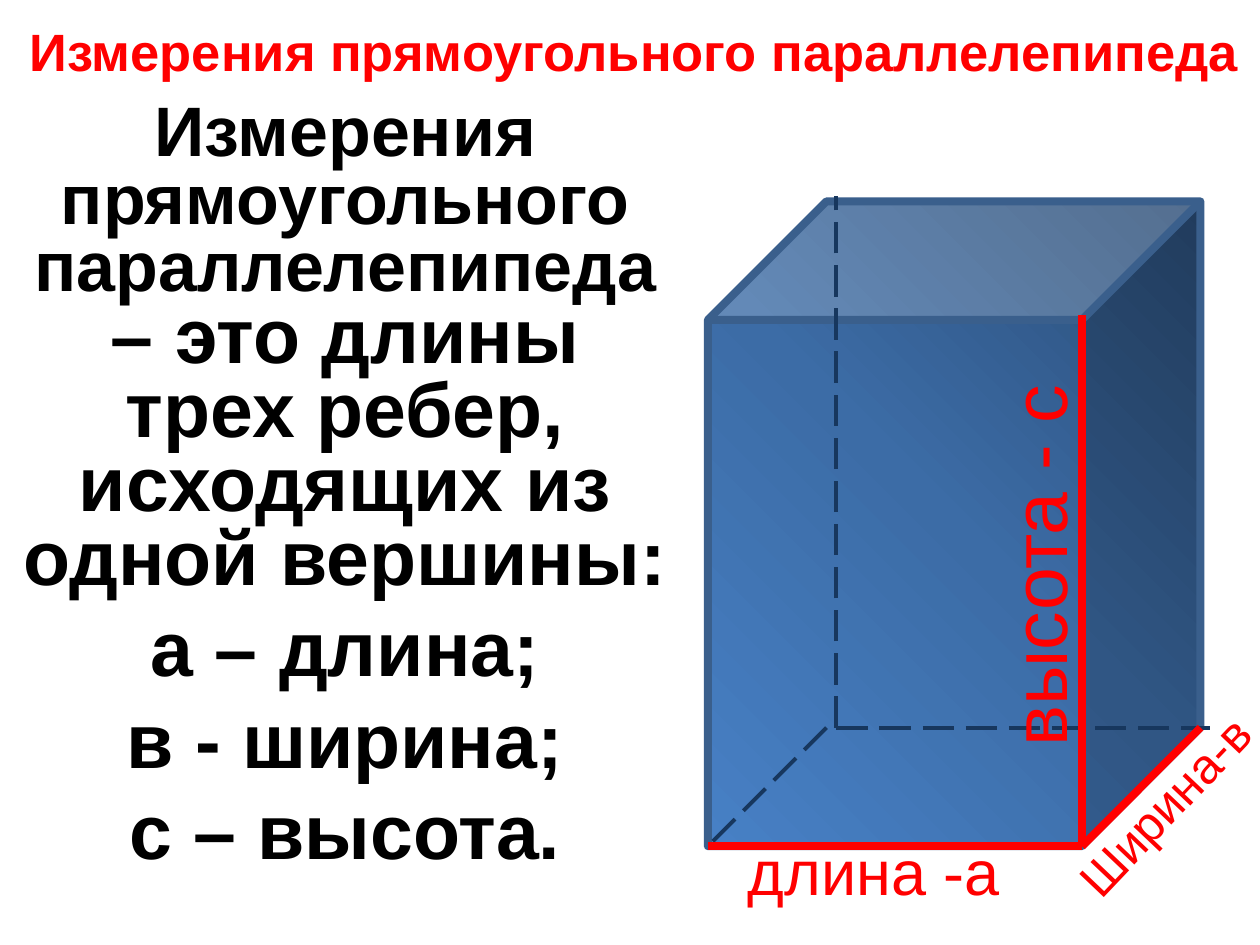
from copy import deepcopy
from dataclasses import dataclass

from lxml import etree
from pptx import Presentation
from pptx.dml.color import RGBColor
from pptx.enum.dml import MSO_LINE
from pptx.enum.shapes import MSO_CONNECTOR, MSO_SHAPE
from pptx.enum.text import MSO_ANCHOR, MSO_AUTO_SIZE, PP_ALIGN
from pptx.oxml.ns import qn
from pptx.util import Cm, Pt

CENTER = PP_ALIGN.CENTER
TOP, MIDDLE = MSO_ANCHOR.TOP, MSO_ANCHOR.MIDDLE
GROW, FIXED = MSO_AUTO_SIZE.SHAPE_TO_FIT_TEXT, MSO_AUTO_SIZE.NONE
STRAIGHT = MSO_CONNECTOR.STRAIGHT
LONG_DASH = MSO_LINE.LONG_DASH
CUBE = MSO_SHAPE.CUBE

FONT = "Arial"
RED = RGBColor(0xFF, 0x00, 0x00)
BLACK = RGBColor(0x00, 0x00, 0x00)
NAVY = RGBColor(0x17, 0x37, 0x5E)
EDGE_BLUE = RGBColor(0x3A, 0x5F, 0x8C)
DARK_BLUE = RGBColor(0x2A, 0x4C, 0x75)
MIDDLE_BLUE = RGBColor(0x3C, 0x6C, 0xA6)
LIGHT_BLUE = RGBColor(0x47, 0x80, 0xC5)

# Geometry of the solid, in centimetres
LEFT, TOP_EDGE, WIDTH, HEIGHT, DEPTH = 14.27, 4.06, 9.93, 13.0, 2.39
RIGHT, BOTTOM = LEFT + WIDTH, TOP_EDGE + HEIGHT
FRONT_RIGHT, BACK_BOTTOM = RIGHT - DEPTH, BOTTOM - DEPTH
HIDDEN_X = LEFT + DEPTH + 0.2


@dataclass
class Span:
    text: str
    size: float


@dataclass
class Edge:
    start: tuple[float, float]
    end: tuple[float, float]
    hidden: bool = False


@dataclass
class Label:
    text: str
    area: tuple[float, float, float, float]
    size: float
    rotation: float = 0


BODY = [
    [Span("Измерения прямоугольного параллелепипеда ", 40),
     Span("– это длины трех ребер, исходящих из одной вершины:", 44)],
    [Span("а – длина;", 44)],
    [Span("в - ширина;", 44)],
    [Span("с – высота.", 44)],
]

EDGES = [
    Edge((LEFT + DEPTH, BACK_BOTTOM), (LEFT, BOTTOM), hidden=True),
    Edge((HIDDEN_X, BACK_BOTTOM), (RIGHT + 0.2, BACK_BOTTOM), hidden=True),
    Edge((HIDDEN_X, BACK_BOTTOM), (HIDDEN_X, TOP_EDGE - 0.1), hidden=True),
    Edge((LEFT, BOTTOM), (FRONT_RIGHT, BOTTOM)),
    Edge((RIGHT, BACK_BOTTOM), (FRONT_RIGHT, BOTTOM)),
    Edge((FRONT_RIGHT, TOP_EDGE + DEPTH - 0.1), (FRONT_RIGHT, BOTTOM)),
]

LABELS = [
    Label("длина -а", (14.58, 16.66, 6.07, 1.8), 36),
    Label("Ширина-в", (20.93, 15.52, 5.08, 1.45), 28, 313.5),
    Label("высота - с", (16.84, 10.34, 8.13, 2.13), 44, 270),
]


def add_text(page, paragraphs: list[list[Span]], area, *, color=RED, bold=False,
             anchor=TOP, line_spacing=None, space_before=0, rotation=0.0,
             margins=True, auto_size=FIXED):
    box = page.shapes.add_textbox(*map(Cm, area))
    box.rotation = rotation
    frame = box.text_frame
    frame.word_wrap = True
    frame.auto_size = auto_size
    frame.vertical_anchor = anchor
    if not margins:
        frame.margin_left = frame.margin_right = 0
        frame.margin_top = frame.margin_bottom = 0
    for index, spans in enumerate(paragraphs):
        para = frame.add_paragraph() if index else frame.paragraphs[0]
        para.alignment = CENTER
        para.space_before = Pt(space_before)
        if line_spacing:
            para.line_spacing = line_spacing
        for span in spans:
            run = para.add_run()
            run.text = span.text
            run.font.name = FONT
            run.font.size = Pt(span.size)
            run.font.bold = bold
            run.font.color.rgb = color


def add_solid(page):
    solid = page.shapes.add_shape(CUBE, Cm(LEFT), Cm(TOP_EDGE), Cm(WIDTH), Cm(HEIGHT))
    solid.shadow.inherit = False
    solid.adjustments[0] = DEPTH / WIDTH
    solid.line.color.rgb = EDGE_BLUE
    solid.line.width = Pt(4.5)
    solid.fill.gradient()
    solid.fill.gradient_angle = 225
    # A third stop is inserted between the two default ones
    stops = solid._element.spPr.find(qn("a:gradFill")).find(qn("a:gsLst"))
    stops.insert(1, deepcopy(stops[0]))
    colors = (DARK_BLUE, MIDDLE_BLUE, LIGHT_BLUE)
    for index, (stop, color) in enumerate(zip(solid.fill.gradient_stops, colors)):
        stop.color.rgb = color
        stop.position = index / 2


def add_edge(page, edge: Edge):
    line = page.shapes.add_connector(STRAIGHT, *map(Cm, edge.start + edge.end))
    line.line.color.rgb = NAVY if edge.hidden else RED
    line.line.width = Pt(2.25 if edge.hidden else 4.5)
    if edge.hidden:
        line.line.dash_style = LONG_DASH
    etree.SubElement(line._element.spPr, qn("a:effectLst"))


def main():
    deck = Presentation()
    deck.slide_width, deck.slide_height = Cm(25.4), Cm(19.05)
    page = deck.slides.add_slide(deck.slide_layouts[6])

    # Heading and definition
    add_text(page, [[Span("Измерения прямоугольного параллелепипеда", 30)]],
             (0.43, 0.25, 24.71, 1.7), bold=True, anchor=MIDDLE,
             line_spacing=0.9, margins=False)
    add_text(page, BODY, (0.43, 2.08, 13.06, 16.74), color=BLACK, bold=True,
             line_spacing=0.8, space_before=10, margins=False)

    # Solid with its hidden and measured edges
    add_solid(page)
    for edge in EDGES:
        add_edge(page, edge)

    # Names of the three dimensions
    for label in LABELS:
        add_text(page, [[Span(label.text, label.size)]], label.area,
                 rotation=label.rotation, auto_size=GROW)

    deck.save("out.pptx")


if __name__ == "__main__":
    main()
